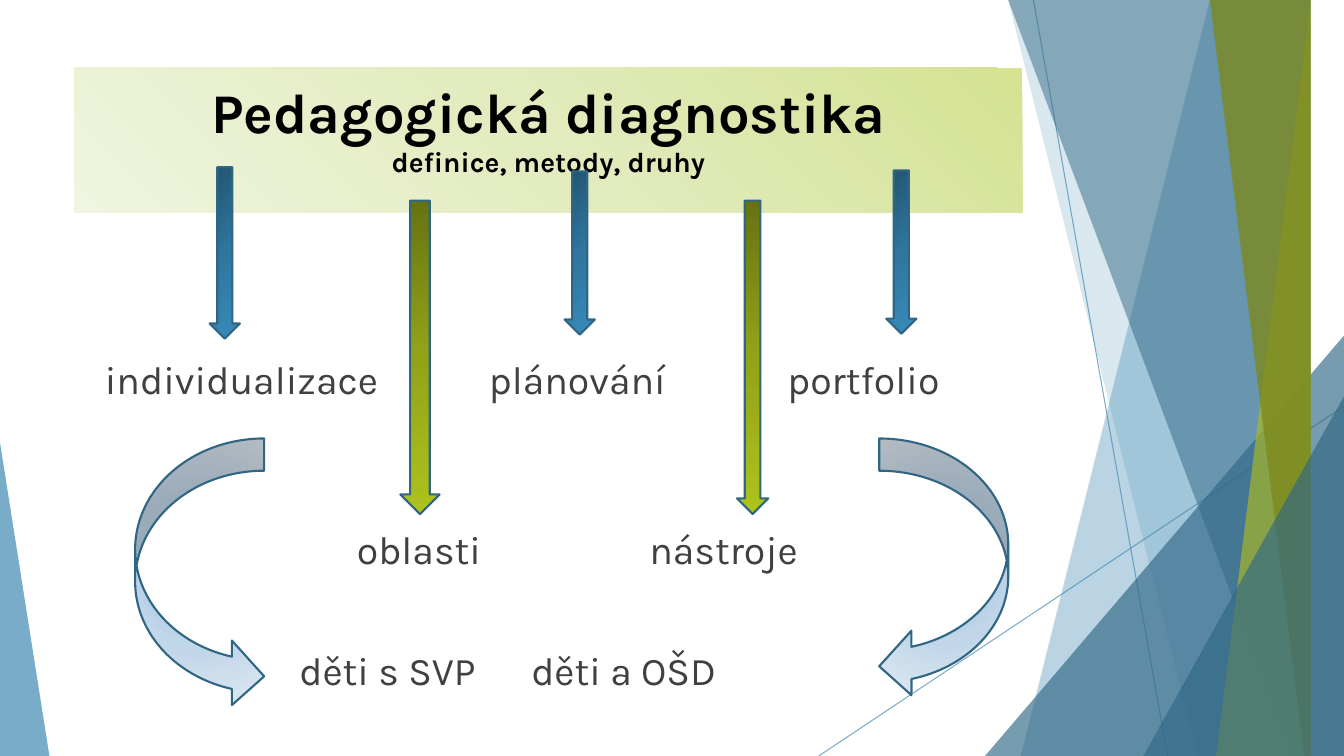
from lxml import etree
from pptx import Presentation
from pptx.dml.color import RGBColor
from pptx.enum import shapes, text
from pptx.oxml.ns import qn
from pptx.util import Inches, Pt

COLORS = {
    "blue": "418AB3", "dark_blue": "316886", "lime": "A6B727", "olive": "7D891D",
    "outline": "306684", "title": "000000", "label": "404040",
}
GRADIENTS = {
    "banner": ("D4E292", "E2EBBE", "F0F5DF"),
    "blue": ("21536F", "30769E", "388CBC"),
    "green": ("677311", "93A318", "AEC21C"),
    "pale": ("98BEDE", "C1D6E9", "E1EAF3"),
}
FONT = "Karla"
SHAPE = shapes.MSO_SHAPE


def rgb(name):
    return RGBColor.from_string(COLORS[name])


def set_alpha(sp, percent):
    for color in sp._element.spPr.iter(qn("a:srgbClr")):
        etree.SubElement(color, qn("a:alpha")).set("val", str(percent * 1000))


def set_gradient(sp, name, angle=None):
    """Three even stops, linear at a clockwise angle, or radial without one."""
    sp.fill.gradient()
    grad = sp._element.spPr.find(qn("a:gradFill"))
    for child in list(grad):
        grad.remove(child)
    stops = etree.SubElement(grad, qn("a:gsLst"))
    for i, color in enumerate(GRADIENTS[name]):
        stop = etree.SubElement(stops, qn("a:gs"), pos=str(i * 50000))
        etree.SubElement(stop, qn("a:srgbClr"), val=color)
    if angle is None:
        radial = etree.SubElement(grad, qn("a:path"))
        radial.set("path", "circle")
        etree.SubElement(radial, qn("a:fillToRect"),
                         {side: "50000" for side in "ltrb"})
    else:
        etree.SubElement(grad, qn("a:lin"), ang=str(angle * 60000), scaled="0")


def add_facet(s, sp, color, alpha):
    sp.shadow.inherit = False
    sp.fill.solid()
    sp.fill.fore_color.rgb = rgb(color)
    sp.line.fill.background()
    set_alpha(sp, alpha)


def add_decoration(s, width, height):
    """Translucent facets along the right edge and a sliver at the left."""
    def line(x1, y1, x2, y2):
        c = s.shapes.add_connector(shapes.MSO_CONNECTOR.STRAIGHT,
                                   *map(Inches, (x1, y1, x2, y2)))
        c.line.color.rgb = rgb("blue")
        c.line.width = Pt(0.75)
        etree.SubElement(c._element.spPr, qn("a:effectLst"))
        set_alpha(c, 70)

    def band(top_x, bottom_x, color, alpha):
        builder = s.shapes.build_freeform(top_x, 0, scale=Inches(1))
        builder.add_line_segments(
            [(width, 0), (width, height), (bottom_x, height)], close=True)
        add_facet(s, builder.convert_to_shape(), color, alpha)

    def wedge(left, top, right, apex, color, alpha):
        sp = s.shapes.add_shape(SHAPE.ISOSCELES_TRIANGLE, Inches(left), Inches(top),
                                Inches(right - left), Inches(height - top))
        sp.adjustments[0] = apex
        add_facet(s, sp, color, alpha)

    line(10.25, 0, 11.58, height)
    line(width, 4.03, 8.12, height)
    band(12.28, 10.04, "blue", 36)
    band(10.5, 11.83, "blue", 20)
    wedge(9.77, 3.33, width, 1, "dark_blue", 66)
    band(10.21, 12.91, "dark_blue", 50)
    band(13.03, 11.92, "lime", 70)
    band(11.96, 13.18, "olive", 80)
    wedge(11.34, 3.93, width, 1, "dark_blue", 66)
    wedge(0, 4.39, 0.49, 0, "blue", 70)


def add_title(s, left, top, width, height):
    title = s.shapes.title
    title.left, title.top, title.width, title.height = map(
        Inches, (left, top, width, height))
    set_gradient(title, "banner", 135)
    tf = title.text_frame
    tf.word_wrap = True
    tf.auto_size = text.MSO_AUTO_SIZE.NONE
    tf.vertical_anchor = text.MSO_ANCHOR.TOP
    tf.margin_top = Inches(0.1)
    p = tf.paragraphs[0]
    p.alignment = text.PP_ALIGN.CENTER
    p.line_spacing = 1
    p.font.name, p.font.bold = FONT, True
    p.font.color.rgb = rgb("title")
    for i, (words, size) in enumerate([("Pedagogická diagnostika", 40),
                                       ("definice, metody, druhy", 20)]):
        if i:
            p.add_line_break()
        r = p.add_run()
        r.text = words
        r.font.size = Pt(size)


def add_labels(s, left, top):
    """Rows of topics: offset of the row, then each word with its indent."""
    rows = [
        (0, [(0, "individualizace"), (3.81, "plánování"), (6.77, "portfolio")]),
        (1.68, [(2.5, "oblasti"), (5.4, "nástroje")]),
        (2.89, [(1.93, "děti s SVP"), (4.23, "děti a OŠD")]),
    ]
    for down, words in rows:
        for indent, word in words:
            box = s.shapes.add_textbox(Inches(left + indent), Inches(top + down),
                                       Inches(2.9), Inches(0.6))
            tf = box.text_frame
            tf.word_wrap = True
            tf.margin_left = tf.margin_right = 0
            tf.vertical_anchor = text.MSO_ANCHOR.MIDDLE
            p = tf.paragraphs[0]
            p.text = word
            p.font.name, p.font.size = FONT, Pt(28)
            p.font.color.rgb = rgb("label")


def add_arrow(s, kind, box, gradient, angle=None):
    sp = s.shapes.add_shape(kind, *map(Inches, box))
    sp.shadow.inherit = False
    set_gradient(sp, gradient, angle)
    sp.line.color.rgb = rgb("outline")
    sp.line.width = Pt(1.5)


def add_arrows(s):
    # Short arrows to the first row, long ones to the second
    for box in [(2.08, 1.66, 0.3, 1.7), (5.6, 1.7, 0.3, 1.62), (8.79, 1.69, 0.3, 1.62)]:
        add_arrow(s, SHAPE.DOWN_ARROW, box, "blue", 45)
    for left, width in [(3.97, 0.39), (7.31, 0.31)]:
        add_arrow(s, SHAPE.DOWN_ARROW, (left, 1.99, width, 3.11), "green", 90)
    # Curved arrows to the last row
    add_arrow(s, SHAPE.CURVED_RIGHT_ARROW, (1.34, 4.35, 1.28, 2.68), "pale")
    add_arrow(s, SHAPE.CURVED_LEFT_ARROW, (8.72, 4.35, 1.28, 2.58), "pale")


def main():
    prs = Presentation()
    prs.slide_width, prs.slide_height = Inches(13.33), Inches(7.5)
    s = prs.slides.add_slide(prs.slide_layouts[5])
    add_decoration(s, 13.33, 7.5)
    add_title(s, 0.74, 0.67, 9.4, 1.44)
    add_labels(s, 1.04, 3.46)
    add_arrows(s)
    prs.save("out.pptx")


if __name__ == "__main__":
    main()
